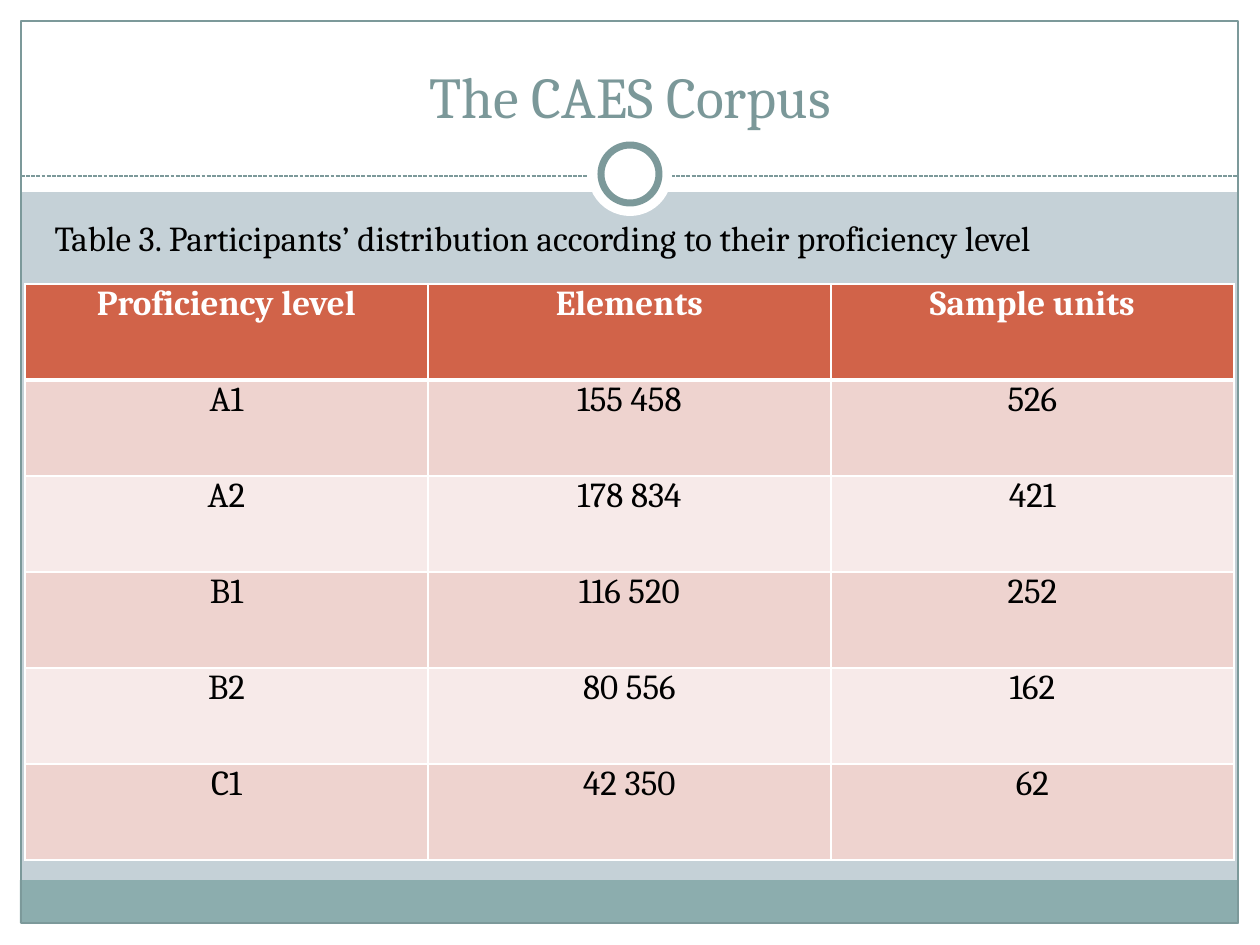
from lxml import etree
from pptx import Presentation
from pptx.dml.color import RGBColor
from pptx.enum.dml import MSO_LINE
from pptx.enum.shapes import MSO_CONNECTOR, MSO_SHAPE
from pptx.enum.text import MSO_ANCHOR, MSO_AUTO_SIZE, PP_ALIGN
from pptx.oxml.ns import qn
from pptx.util import Emu, Pt

RECT, OVAL = MSO_SHAPE.RECTANGLE, MSO_SHAPE.OVAL
STRAIGHT, DASH = MSO_CONNECTOR.STRAIGHT, MSO_LINE.SQUARE_DOT
LEFT, CENTER = PP_ALIGN.LEFT, PP_ALIGN.CENTER
TOP, BOTTOM = MSO_ANCHOR.TOP, MSO_ANCHOR.BOTTOM
NO_FIT = MSO_AUTO_SIZE.NONE

WHITE = RGBColor(0xFF, 0xFF, 0xFF)
BLACK = RGBColor(0x00, 0x00, 0x00)
MIST = RGBColor(0xC5, 0xD1, 0xD7)
TEAL = RGBColor(0x8C, 0xAD, 0xAE)
SLATE = RGBColor(0x7C, 0x99, 0x9A)
TITLE = RGBColor(0x7B, 0x98, 0x99)
RUST = RGBColor(0xD1, 0x63, 0x49)
BANDS = (RGBColor(0xEE, 0xD3, 0xCF), RGBColor(0xF7, 0xEA, 0xE9))

ROWS = [
    ("Proficiency level", "Elements", "Sample units"),
    ("A1", "155 458", "526"),
    ("A2", "178 834", "421"),
    ("B1", "116 520", "252"),
    ("B2", "80 556", "162"),
    ("C1", "42 350", "62"),
]


def px(n):
    return Emu(round(n * 914400 / 126))


class Deck:
    font = "Cambria"

    def __init__(self, width, height):
        self.prs = Presentation()
        self.prs.slide_width, self.prs.slide_height = px(width), px(height)
        self.s = self.prs.slides.add_slide(self.prs.slide_layouts[1])
        self.s.background.fill.solid()
        self.s.background.fill.fore_color.rgb = MIST

    def shape(self, kind, box, fill=None, line=None, weight=0.75):
        sp = self.s.shapes.add_shape(kind, *map(px, box))
        sp.shadow.inherit = False
        if fill is None:
            sp.fill.background()
        else:
            sp.fill.solid()
            sp.fill.fore_color.rgb = fill
        if line is None:
            sp.line.fill.background()
        else:
            sp.line.color.rgb = line
            sp.line.width = Pt(weight)

    def dashed_line(self, x1, y1, x2, y2, color):
        cx = self.s.shapes.add_connector(STRAIGHT, *map(px, (x1, y1, x2, y2)))
        cx.line.color.rgb = color
        cx.line.width = Pt(0.75)
        cx.line.dash_style = DASH
        etree.SubElement(cx._element.spPr, qn("a:effectLst"))

    def style(self, p, size, color, align, bold=False):
        p.alignment = align
        for r in p.runs:
            r.font.name, r.font.size, r.font.bold = self.font, Pt(size), bold
            r.font.color.rgb = color

    def placeholder(self, idx, box, text, size, color, align, anchor):
        sp = self.s.placeholders[idx]
        sp.left, sp.top, sp.width, sp.height = map(px, box)
        self.s.shapes._spTree.append(sp._element)
        tf = sp.text_frame
        tf.text = text
        tf.word_wrap, tf.auto_size, tf.vertical_anchor = True, NO_FIT, anchor
        p = tf.paragraphs[0]
        self.style(p, size, color, align)
        pPr = p._p.get_or_add_pPr()
        pPr.set("marL", "0")
        pPr.set("indent", "0")
        etree.SubElement(pPr, qn("a:buNone"))

    def border(self, cell, side, weight):
        tcPr = cell._tc.get_or_add_tcPr()
        ln = etree.SubElement(tcPr, qn(f"a:ln{side}"), w=str(Pt(weight)))
        fill = etree.SubElement(ln, qn("a:solidFill"))
        etree.SubElement(fill, qn("a:srgbClr"), val=str(WHITE))

    def table(self, left, top, col_width, row_height, rows):
        n, m = len(rows), len(rows[0])
        box = (left, top, col_width * m, row_height * n)
        table = self.s.shapes.add_table(n, m, *map(px, box)).table
        for col in table.columns:
            col.width = px(col_width)
        for i, values in enumerate(rows):
            table.rows[i].height = px(row_height)
            head = i == 0
            for j, value in enumerate(values):
                cell = table.cell(i, j)
                cell.margin_left = cell.margin_right = px(9)
                cell.margin_top = cell.margin_bottom = 0
                weights = {"L": 1, "R": 1, "T": 3 if i == 1 else 1, "B": 3 if head else 1}
                for side, weight in weights.items():
                    self.border(cell, side, weight)
                cell.fill.solid()
                cell.fill.fore_color.rgb = RUST if head else BANDS[(i - 1) % 2]
                p = cell.text_frame.paragraphs[0]
                p.text = value
                self.style(p, 20, WHITE if head else BLACK, CENTER, head)
                pPr = p._p.get_or_add_pPr()
                pPr.set("marL", str(px(39)))
                pPr.set("indent", str(-px(39)))


def main():
    deck = Deck(1260, 945)
    for box in [(0, 924, 1260, 21), (0, 0, 1260, 192), (0, 0, 21, 945), (1239, 0, 21, 945)]:
        deck.shape(RECT, box, WHITE)
    deck.shape(RECT, (20, 880, 1218, 43), TEAL)
    deck.shape(RECT, (21, 21, 1217, 902), line=SLATE)
    deck.dashed_line(21, 176, 1239, 176, SLATE)
    deck.shape(OVAL, (588, 132, 84, 84), WHITE)
    deck.shape(OVAL, (601, 145, 58, 58), WHITE, SLATE, 4)
    deck.placeholder(0, (42, 32, 1176, 104), "The CAES Corpus", 33, TITLE, CENTER, BOTTOM)
    deck.placeholder(1, (42, 210, 1172, 630),
                     "Table 3. Participants’ distribution according to their proficiency level",
                     20, BLACK, LEFT, TOP)
    deck.table(25, 284, 403, 96, ROWS)
    deck.prs.save("out.pptx")


if __name__ == "__main__":
    main()
